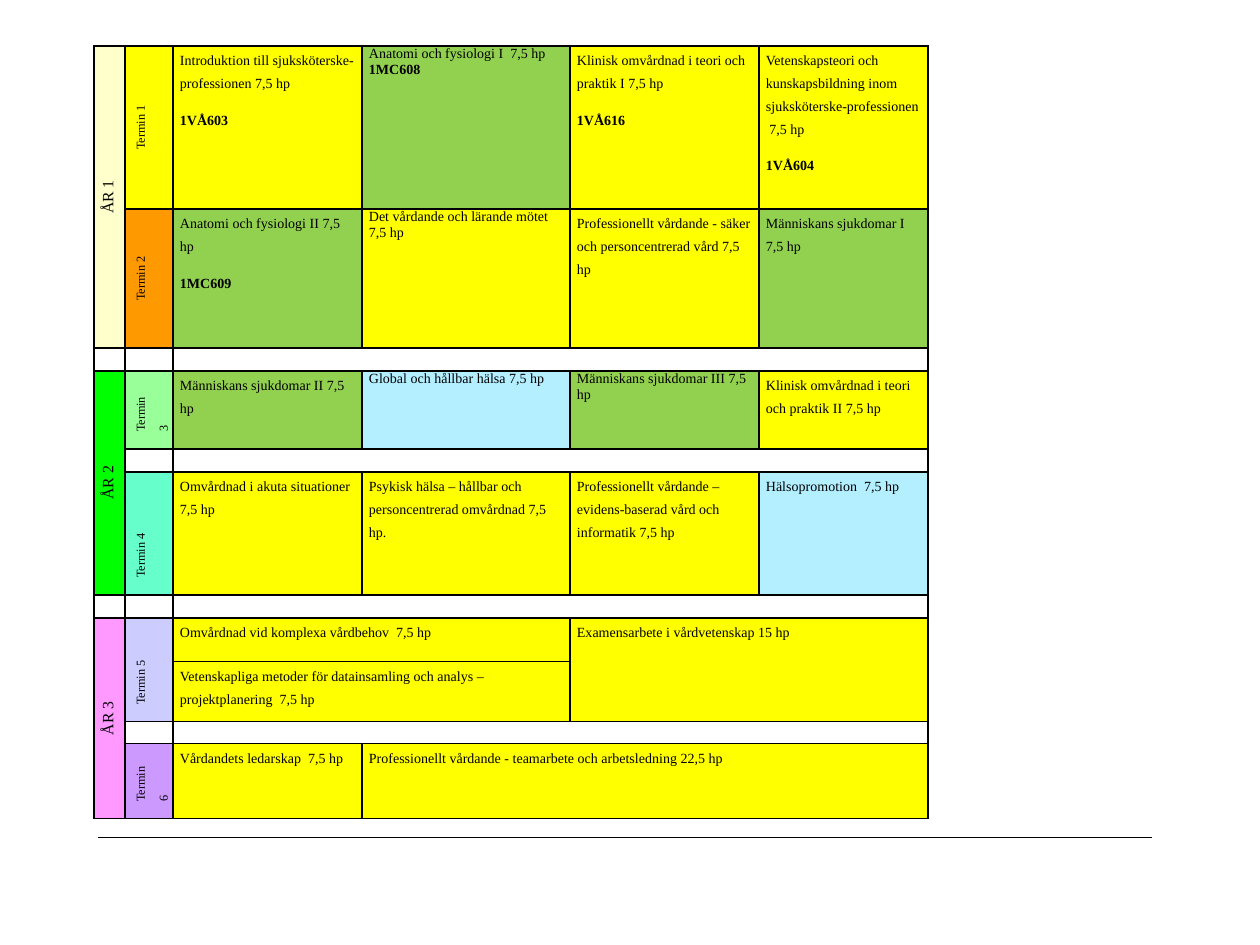
from lxml import etree
from pptx import Presentation
from pptx import util as u
from pptx.dml.color import RGBColor
from pptx.enum import shapes, text
from pptx.oxml import ns

PX = 914400 / 126
FONT = "Times New Roman"
BLACK, YELLOW, GREEN, BLUE = "000000", "FFFF00", "92D050", "B3EFFF"

COLUMNS = [31, 48, 189, 208, 189, 169]
ROWS = [163, 139, 23, 78, 23, 123, 23, 44, 60, 22, 75]

# label, row, rows spanned, fill
YEARS = [
    ("ÅR 1", 0, 2, "FFFFCC"),
    ("ÅR 2", 3, 3, "00FF00"),
    ("ÅR 3", 7, 4, "FF99FF"),
]
# label, row, rows spanned, fill, centred
TERMS = [
    ("Termin 1", 0, 1, "FFFF00", True),
    ("Termin 2", 1, 1, "FF9900", True),
    ("Termin 3", 3, 1, "99FF99", False),
    ("Termin 4", 5, 1, "66FFCC", False),
    ("Termin 5", 7, 2, "CCCCFF", False),
    ("Termin 6", 10, 1, "CC99FF", False),
]
# row, column, fill, name, format
COURSES = [
    (0, 2, YELLOW, "Introduktion till sjuksköterske-professionen 7,5 hp", {"code": "1VÅ603"}),
    (0, 3, GREEN, "Anatomi och fysiologi I  7,5 hp ", {"code": "1MC608", "tight": True}),
    (0, 4, YELLOW, "Klinisk omvårdnad i teori och praktik I 7,5 hp", {"code": "1VÅ616"}),
    (0, 5, YELLOW, "Vetenskapsteori och kunskapsbildning inom "
                   "sjuksköterske-professionen  7,5 hp", {"code": "1VÅ604"}),
    (1, 2, GREEN, "Anatomi och fysiologi II 7,5 hp", {"code": "1MC609"}),
    (1, 3, YELLOW, "Det vårdande och lärande mötet 7,5 hp", {"tight": True}),
    (1, 4, YELLOW, "Professionellt vårdande - säker och personcentrerad vård 7,5 hp", {}),
    (1, 5, GREEN, "Människans sjukdomar I 7,5 hp", {}),
    (3, 2, GREEN, "Människans sjukdomar II 7,5 hp", {}),
    (3, 3, BLUE, "Global och hållbar hälsa 7,5 hp", {"tight": True}),
    (3, 4, GREEN, "Människans sjukdomar III 7,5 hp", {"tight": True}),
    (3, 5, YELLOW, "Klinisk omvårdnad i teori och praktik II 7,5 hp", {}),
    (5, 2, YELLOW, "Omvårdnad i akuta situationer  7,5 hp", {}),
    (5, 3, YELLOW, "Psykisk hälsa – hållbar och personcentrerad omvårdnad 7,5 hp.", {}),
    (5, 4, YELLOW, "Professionellt vårdande – evidens-baserad vård och informatik 7,5 hp", {}),
    (5, 5, BLUE, "Hälsopromotion  7,5 hp", {}),
    (7, 2, YELLOW, "Omvårdnad vid komplexa vårdbehov  7,5 hp", {"span": (1, 2)}),
    (7, 4, YELLOW, "Examensarbete i vårdvetenskap 15 hp", {"span": (2, 2)}),
    (8, 2, YELLOW, "Vetenskapliga metoder för datainsamling och analys – "
                   "projektplanering  7,5 hp", {"span": (1, 2)}),
    (10, 2, YELLOW, "Vårdandets ledarskap  7,5 hp", {}),
    (10, 3, YELLOW, "Professionellt vårdande - teamarbete och arbetsledning 22,5 hp",
     {"span": (1, 3)}),
]
GAP_ROWS = [2, 4, 6, 9]


def px(value):
    return u.Emu(round(value * PX))


def color(value):
    return RGBColor.from_string(value)


def write(para, words, size=8, bold=False):
    span = para.add_run()
    span.text = words
    span.font.name = FONT
    span.font.size = u.Pt(size)
    span.font.bold = bold
    span.font.color.rgb = color(BLACK)


def space(para):
    para.line_spacing = u.Pt(13)
    para.space_after = u.Pt(8)


class Plan:
    """Holds the current page and its table, and draws each kind of part."""

    def __init__(self, page):
        self.page = page

    def line(self, x1, y1, x2, y2):
        rule = self.page.shapes.add_connector(
            shapes.MSO_CONNECTOR.STRAIGHT, px(x1), px(y1), px(x2), px(y2))
        rule.line.color.rgb = color(BLACK)
        rule.line.width = u.Pt(0.5)
        etree.SubElement(rule._element.spPr, ns.qn("a:effectLst"))

    def grid(self, left, top):
        frame = self.page.shapes.add_table(
            len(ROWS), len(COLUMNS), px(left), px(top), px(sum(COLUMNS)), px(sum(ROWS)))
        self.table = frame.table
        self.table.first_row = self.table.horz_banding = False
        for column, width in zip(self.table.columns, COLUMNS):
            column.width = px(width)
        for row, height in zip(self.table.rows, ROWS):
            row.height = px(height)
        for cell in self.table.iter_cells():
            self.clear(cell)

    def clear(self, cell):
        cell.margin_left = cell.margin_right = px(7)
        cell.margin_top = cell.margin_bottom = 0
        cell.fill.background()
        # Borders come before the fill in the cell properties
        properties = cell._tc.get_or_add_tcPr()
        for index, side in enumerate("LRTB"):
            border = etree.Element(ns.qn(f"a:ln{side}"), w=str(u.Pt(1)))
            fill = etree.SubElement(border, ns.qn("a:solidFill"))
            etree.SubElement(fill, ns.qn("a:srgbClr"), val=BLACK)
            properties.insert(index, border)
        # A small text size keeps empty rows low
        para = cell.text_frame.paragraphs[0]
        etree.SubElement(para._p, ns.qn("a:endParaRPr"), sz="800")

    def cell(self, row, column, fill=None, span=(1, 1)):
        cell = self.table.cell(row, column)
        if span != (1, 1):
            cell.merge(self.table.cell(row + span[0] - 1, column + span[1] - 1))
        if fill:
            cell.fill.solid()
            cell.fill.fore_color.rgb = color(fill)
        return cell

    def label(self, row, column, rows, fill, words, size, centred=True):
        cell = self.cell(row, column, fill, (rows, 1))
        cell._tc.get_or_add_tcPr().set("vert", "vert270")
        para = cell.text_frame.paragraphs[0]
        space(para)
        para.alignment = text.PP_ALIGN.CENTER if centred else text.PP_ALIGN.LEFT
        for side in ("marL", "marR"):
            para._p.get_or_add_pPr().set(side, str(px(10)))
        write(para, words, size)

    def course(self, row, column, fill, name, code=None, tight=False, span=(1, 1)):
        frame = self.cell(row, column, fill, span).text_frame
        para = frame.paragraphs[0]
        write(para, name)
        if not tight:
            space(para)
        if code:
            if not tight:
                para = frame.add_paragraph()
                space(para)
            write(para, code, bold=True)


def main():
    deck = Presentation()
    deck.slide_width, deck.slide_height = u.Inches(10), u.Inches(7.5)
    plan = Plan(deck.slides.add_slide(deck.slide_layouts[6]))

    # Footer rule
    plan.line(98, 837, 1152, 837)

    # Programme table
    plan.grid(94, 46)
    for row in GAP_ROWS:
        plan.cell(row, 2, span=(1, 4))
    for name, row, rows, fill in YEARS:
        plan.label(row, 0, rows, fill, name, 9)
    for name, row, rows, fill, centred in TERMS:
        plan.label(row, 1, rows, fill, name, 7, centred)
    for row, column, fill, name, options in COURSES:
        plan.course(row, column, fill, name, **options)

    deck.save("out.pptx")


if __name__ == "__main__":
    main()
